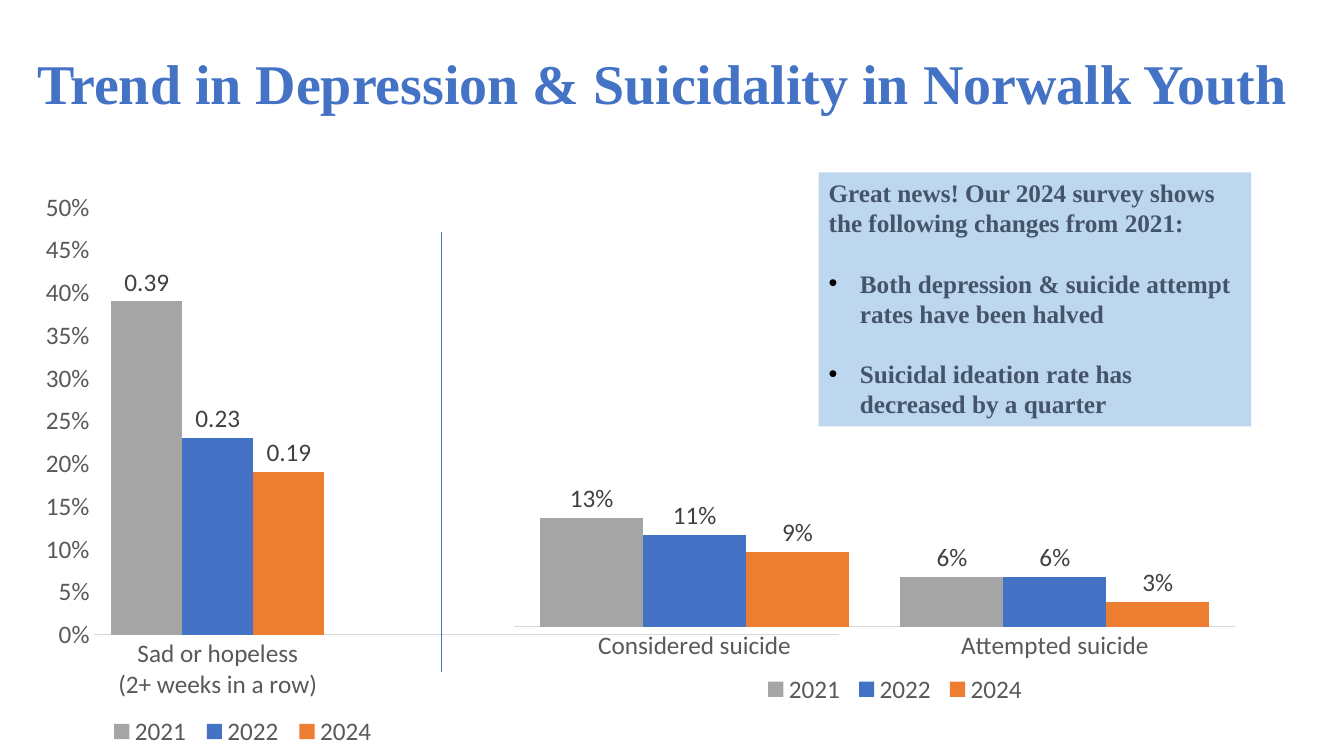
from lxml import etree
from pptx import Presentation
from pptx import util as u
from pptx.chart import data as chart_data
from pptx.dml import color
from pptx.enum import chart as kinds, shapes, text
from pptx.oxml import ns

COLORS = {"blue": "4472C4", "gray": "A5A5A5", "orange": "ED7D31", "panel": "BDD7EE",
          "slate": "44546A", "axis": "595959", "label": "404040", "rule": "D9D9D9",
          "black": "000000"}
YEARS = {"2021": "gray", "2022": "blue", "2024": "orange"}


def rgb(name):
    return color.RGBColor.from_string(COLORS[name])


def inches(*lengths):
    return [u.Inches(length) for length in lengths]


class TrendSlide:
    """Holds the style and the current slide."""

    heading_font = "Times New Roman"
    chart_font = "Calibri"
    body_size = 18

    def __init__(self, deck):
        self.page = deck.slides.add_slide(deck.slide_layouts[6])

    def style(self, font, size, name, face, bold=False):
        font.size, font.name, font.bold = u.Pt(size), face, bold
        font.color.rgb = rgb(name)

    def span(self, para, words, size, name):
        span = para.add_run()
        span.text = words
        self.style(span.font, size, name, self.heading_font, True)

    def title(self, words, place):
        box = self.page.shapes.add_textbox(*inches(*place))
        frame = box.text_frame
        frame.word_wrap = True
        frame.vertical_anchor = text.MSO_ANCHOR.MIDDLE
        para = frame.paragraphs[0]
        para.line_spacing = 0.9
        self.span(para, words, 40, "blue")

    def bullet(self, para):
        para.space_before = u.Pt(21.5)
        props = para._p.get_or_add_pPr()
        props.set("marL", str(u.Inches(0.31)))
        props.set("indent", str(u.Inches(-0.31)))
        tint = etree.SubElement(props, ns.qn("a:buClr"))
        etree.SubElement(tint, ns.qn("a:srgbClr")).set("val", COLORS["black"])
        etree.SubElement(props, ns.qn("a:buFont")).set("typeface", "Arial")
        etree.SubElement(props, ns.qn("a:buChar")).set("char", "•")

    def panel(self, lead, points, place):
        box = self.page.shapes.add_shape(shapes.MSO_SHAPE.RECTANGLE, *inches(*place))
        box.shadow.inherit = False
        box.fill.solid()
        box.fill.fore_color.rgb = rgb("panel")
        box.line.fill.background()
        frame = box.text_frame
        frame.word_wrap = True
        frame.auto_size = text.MSO_AUTO_SIZE.SHAPE_TO_FIT_TEXT
        frame.vertical_anchor = text.MSO_ANCHOR.TOP
        for index, words in enumerate([lead, *points]):
            para = frame.add_paragraph() if index else frame.paragraphs[0]
            para.alignment = text.PP_ALIGN.LEFT
            if index:
                self.bullet(para)
            self.span(para, words, self.body_size, "slate")

    def divider(self, x, top, bottom):
        line = self.page.shapes.add_connector(
            shapes.MSO_CONNECTOR.STRAIGHT, *inches(x, top, x, bottom))
        line.line.color.rgb = rgb("blue")
        line.line.width = u.Pt(0.5)
        etree.SubElement(line._element.spPr, ns.qn("a:effectLst"))

    def arrange(self, parent, index, inner=False, **fractions):
        for old in parent.findall(ns.qn("c:layout")):
            parent.remove(old)
        layout = etree.Element(ns.qn("c:layout"))
        manual = etree.SubElement(layout, ns.qn("c:manualLayout"))
        settings = {"layoutTarget": "inner"} if inner else {}
        settings |= {"xMode": "edge", "yMode": "edge", **fractions}
        for tag, value in settings.items():
            etree.SubElement(manual, ns.qn(f"c:{tag}")).set("val", str(value))
        parent.insert(index, layout)

    def columns(self, categories, rows, place, plot, legend, label_format, show_axis):
        data = chart_data.CategoryChartData()
        data.categories = categories
        for year, values in zip(YEARS, rows):
            data.add_series(year, values)
        chart = self.page.shapes.add_chart(
            kinds.XL_CHART_TYPE.COLUMN_CLUSTERED, *inches(*place), data).chart
        self.style(chart.font, 10, "black", self.chart_font)
        chart.has_title = False
        chart.has_legend = True
        chart.legend.position = kinds.XL_LEGEND_POSITION.BOTTOM
        chart.legend.include_in_layout = False
        self.style(chart.legend.font, self.body_size, "axis", self.chart_font)

        for axis in (chart.category_axis, chart.value_axis):
            axis.major_tick_mark = axis.minor_tick_mark = kinds.XL_TICK_MARK.NONE
            axis.has_major_gridlines = False
            self.style(axis.tick_labels.font, self.body_size, "axis", self.chart_font)
        chart.category_axis.format.line.color.rgb = rgb("rule")
        chart.category_axis.format.line.width = u.Pt(0.75)
        scale = chart.value_axis
        scale.minimum_scale, scale.maximum_scale, scale.major_unit = 0, 0.5, 0.05
        scale.tick_labels.number_format = "0%"
        scale.tick_labels.number_format_is_linked = False
        scale.format.line.fill.background()
        scale.visible = show_axis

        bars = chart.plots[0]
        bars.gap_width, bars.overlap, bars.vary_by_categories = 50, 0, False
        for series, name in zip(bars.series, YEARS.values()):
            series.format.fill.solid()
            series.format.fill.fore_color.rgb = rgb(name)
            labels = series.data_labels
            labels.show_value = True
            labels.position = kinds.XL_LABEL_POSITION.OUTSIDE_END
            labels.number_format = label_format
            labels.number_format_is_linked = False
            self.style(labels.font, self.body_size, "label", self.chart_font)
        area = chart._chartSpace.chart.plotArea
        self.arrange(area, 0, True, **dict(zip("xywh", plot)))
        self.arrange(chart.legend._element, 1, **dict(zip("xywh", legend)))


def main():
    deck = Presentation()
    deck.slide_width, deck.slide_height = inches(13.33, 7.5)
    slide = TrendSlide(deck)
    slide.title("Trend in Depression & Suicidality in Norwalk Youth", (0.27, 0.35, 12.6, 1.01))
    slide.panel("Great news! Our 2024 survey shows the following changes from 2021:",
                ["Both depression & suicide attempt rates have been halved",
                 "Suicidal ideation rate has decreased by a quarter"],
                (8.12, 1.71, 4.29, 2.52))
    slide.columns(["Sad or hopeless\n(2+ weeks in a row)", "", ""],
                  [(value, None, None) for value in (0.39, 0.23, 0.19)],
                  (0.27, 1.77, 8.22, 5.73), (0.08, 0.05, 0.9, 0.74),
                  (0.09, 0.93, 0.34, 0.06), "General", True)
    slide.columns(["Considered suicide", "Attempted suicide"],
                  [(0.13, 0.06), (0.11, 0.06), (0.09, 0.03)],
                  (4.38, 1.7, 8.03, 5.38), (0.09, 0.07, 0.89, 0.77),
                  (0.39, 0.92, 0.34, 0.07), "0%", False)
    slide.divider(4.38, 2.3, 6.67)
    deck.save("out.pptx")


if __name__ == "__main__":
    main()
